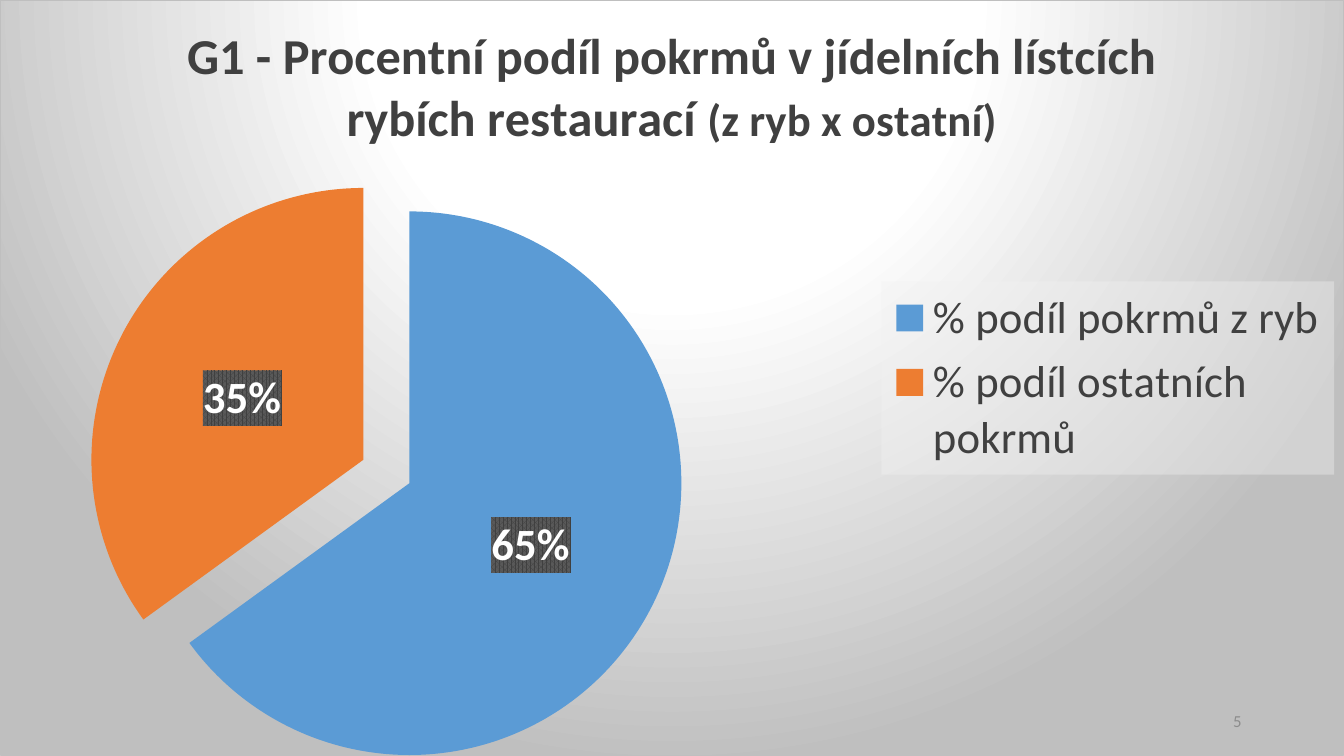
import lxml.etree
import pptx
import pptx.chart.data
import pptx.dml.color
import pptx.enum.chart
import pptx.enum.text
import pptx.oxml
import pptx.oxml.ns
import pptx.util

Cm = pptx.util.Cm
Pt = pptx.util.Pt
RGBColor = pptx.dml.color.RGBColor
qn = pptx.oxml.ns.qn

WHITE = RGBColor(0xFF, 0xFF, 0xFF)
PALE = RGBColor(0xF2, 0xF2, 0xF2)
SILVER = RGBColor(0xBF, 0xBF, 0xBF)
GRAY = RGBColor(0x8C, 0x8C, 0x8C)
SLATE = RGBColor(0x59, 0x59, 0x59)
DARK = RGBColor(0x40, 0x40, 0x40)
BLUE = RGBColor(0x5B, 0x9B, 0xD5)
ORANGE = RGBColor(0xED, 0x7D, 0x31)

FONT = "Calibri"
TITLE_PARTS = [
    ("G1 - Procentní podíl pokrmů v jídelních lístcích rybích restaurací ", 36),
    ("(z ryb x ostatní)", 32),
]
SHARES = [
    ("% podíl pokrmů z ryb", 0.65, BLUE),
    ("% podíl ostatních pokrmů", 0.35, ORANGE),
]

BACKDROP = f"""<a:gradFill>
  <a:gsLst>
    <a:gs pos="0"><a:srgbClr val="{WHITE}"/></a:gs>
    <a:gs pos="39000"><a:srgbClr val="{WHITE}"/></a:gs>
    <a:gs pos="100000"><a:srgbClr val="{SILVER}"/></a:gs>
  </a:gsLst>
  <a:path path="circle">
    <a:fillToRect l="50000" t="-80000" r="50000" b="180000"/>
  </a:path>
</a:gradFill>
<a:ln w="9525"><a:solidFill><a:srgbClr val="{SILVER}"/></a:solidFill></a:ln>"""
LEGEND_FILL = f"""<a:solidFill>
  <a:srgbClr val="{PALE}"><a:alpha val="39000"/></a:srgbClr>
</a:solidFill>"""
LABEL_FILL = f"""<a:pattFill prst="pct75">
  <a:fgClr><a:srgbClr val="{DARK}"/></a:fgClr>
  <a:bgClr><a:srgbClr val="{SLATE}"/></a:bgClr>
</a:pattFill>"""


def set_font(font, color, **values):
    for name, value in {"name": FONT, **values}.items():
        setattr(font, name, value)
    font.color.rgb = color


def add_fill(element, fill):
    properties = pptx.oxml.parse_xml(
        f'<c:spPr {pptx.oxml.ns.nsdecls("c", "a")}>{fill}</c:spPr>'
    )
    element.find(qn("c:txPr")).addprevious(properties)


def place(element, position, target=None):
    for old in element.findall(qn("c:layout")):
        element.remove(old)
    layout = lxml.etree.Element(qn("c:layout"))
    manual = lxml.etree.SubElement(layout, qn("c:manualLayout"))
    settings = {"layoutTarget": target} if target else {}
    settings.update(xMode="edge", yMode="edge", **position)
    for name, value in settings.items():
        lxml.etree.SubElement(manual, qn(f"c:{name}")).set("val", str(value))
    return layout


def format_title(chart):
    frame = chart.chart_title.text_frame
    para = frame.paragraphs[0]
    para.alignment = pptx.enum.text.PP_ALIGN.CENTER
    for text, size in TITLE_PARTS:
        span = para.add_run()
        span.text = text
        set_font(span.font, DARK, size=Pt(size), bold=True)
    chart.chart_title.include_in_layout = False


def format_legend(chart):
    chart.has_legend = True
    legend = chart.legend
    legend.position = pptx.enum.chart.XL_LEGEND_POSITION.RIGHT
    legend.include_in_layout = False
    set_font(legend.font, DARK, size=Pt(32))
    element = legend._element
    layout = place(element, {"x": 0.656, "y": 0.372, "w": 0.337, "h": 0.256})
    element.find(qn("c:legendPos")).addnext(layout)
    add_fill(element, LEGEND_FILL)


def format_pie(chart):
    plot = chart.plots[0]
    plot.vary_by_categories = True
    for index, (_, _, color) in enumerate(SHARES):
        fill = plot.series[0].points[index].format.fill
        fill.solid()
        fill.fore_color.rgb = color
    slice_element = plot.series[0]._element.findall(qn("c:dPt"))[-1]
    explosion = lxml.etree.Element(qn("c:explosion"))
    explosion.set("val", "19")
    slice_element.find(qn("c:spPr")).addprevious(explosion)

    labels = plot.series[0].data_labels
    label_format = {
        "show_percentage": True,
        "show_value": False,
        "show_legend_key": False,
        "number_format": "0%",
        "number_format_is_linked": False,
        "position": pptx.enum.chart.XL_LABEL_POSITION.CENTER,
    }
    for name, value in label_format.items():
        setattr(labels, name, value)
    set_font(labels.font, WHITE, size=Pt(32), bold=True)
    add_fill(labels._element, LABEL_FILL)

    area = chart._chartSpace.chart.plotArea
    position = {"x": 0.102, "y": 0.279, "w": 0.405, "h": 0.721}
    area.insert(0, place(area, position, "inner"))


def add_share_chart(page, left, top, width, height):
    data = pptx.chart.data.CategoryChartData(number_format="0%")
    data.categories = [name for name, _, _ in SHARES]
    data.add_series("Podíl pokrmů", [share for _, share, _ in SHARES])
    kind = pptx.enum.chart.XL_CHART_TYPE.PIE
    chart = page.shapes.add_chart(kind, left, top, width, height, data).chart
    set_font(chart.font, DARK, size=Pt(10))
    add_fill(chart._chartSpace, BACKDROP)
    format_title(chart)
    format_legend(chart)
    format_pie(chart)


def add_page_number(page, left, top, width, height):
    box = page.shapes.add_textbox(left, top, width, height)
    frame = box.text_frame
    frame.word_wrap = True
    frame.vertical_anchor = pptx.enum.text.MSO_ANCHOR.MIDDLE
    para = frame.paragraphs[0]
    para.alignment = pptx.enum.text.PP_ALIGN.RIGHT
    span = para.add_run()
    span.text = "5"
    set_font(span.font, GRAY, size=Pt(12))


def main():
    deck = pptx.Presentation()
    deck.slide_width = Cm(33.87)
    deck.slide_height = Cm(19.05)
    page = deck.slides.add_slide(deck.slide_layouts[6])
    add_share_chart(page, 0, 0, deck.slide_width, deck.slide_height)
    add_page_number(page, Cm(23.92), Cm(17.66), Cm(7.62), Cm(1.01))
    deck.save("out.pptx")


if __name__ == "__main__":
    main()
